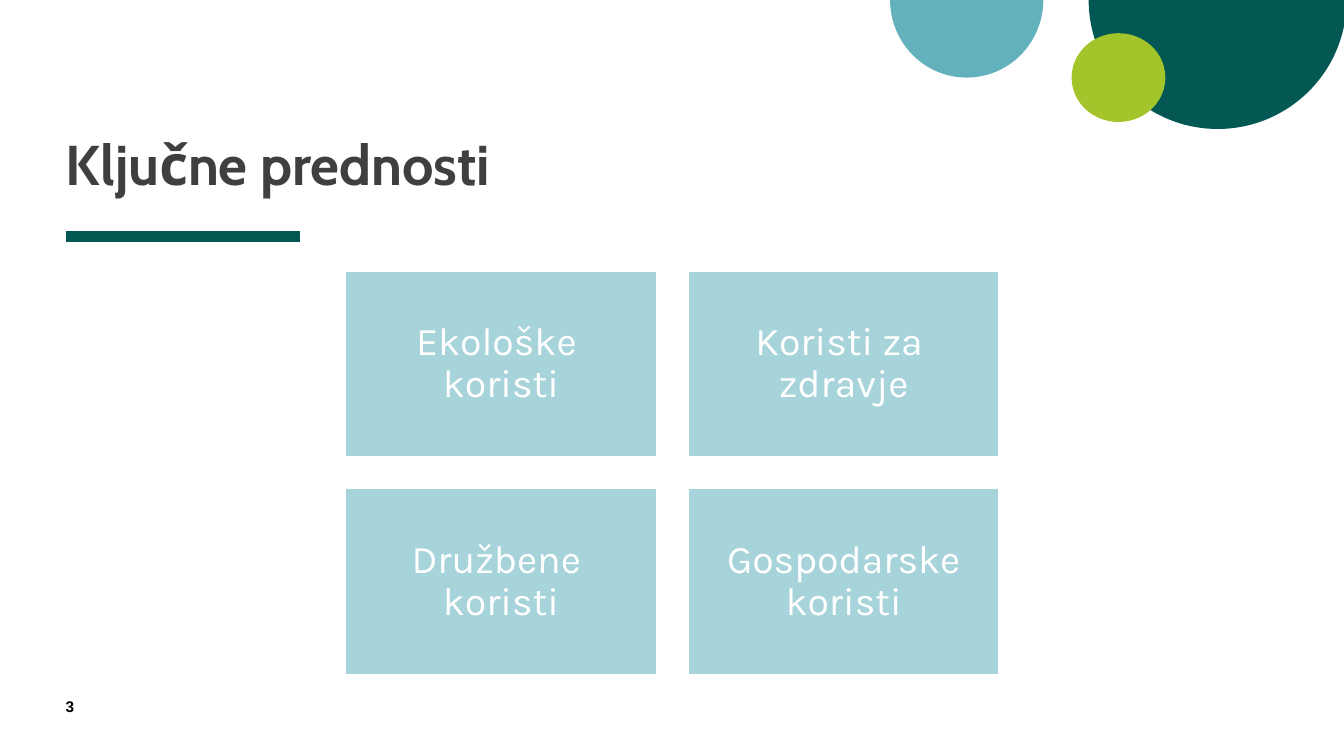
"""Build the key benefits slide with its four cards."""
from itertools import product

from lxml.etree import SubElement
from pptx import Presentation
from pptx.dml.color import RGBColor as RGB
from pptx.enum.shapes import MSO_CONNECTOR as LINE, MSO_SHAPE as SHAPE
from pptx.enum.text import MSO_ANCHOR as ANCHOR, MSO_AUTO_SIZE as AUTO, PP_ALIGN as ALIGN
from pptx.oxml.ns import qn
from pptx.util import Inches, Pt

COLORS = {"green": "035854", "teal": "64B1BE", "lime": "A3C42A", "card": "A7D3DA",
          "title": "3F3F3F", "white": "FFFFFF", "black": "000000"}
BENEFITS = ["Ekološke \nkoristi", "Koristi za \nzdravje",
            "Družbene \nkoristi", "Gospodarske koristi"]


class Deck:
    """Hold the style and current slide; lengths are percentages of the slide."""

    def __init__(self):
        self.prs = Presentation()
        self.prs.slide_width, self.prs.slide_height = Inches(13.33), Inches(7.5)
        self.s = self.prs.slides.add_slide(self.prs.slide_layouts[5])

    def color(self, name):
        return RGB.from_string(COLORS[name])

    def box(self, x, y, w, h):
        sw, sh = self.prs.slide_width, self.prs.slide_height
        return [round(v * size / 100) for v, size in ((x, sw), (y, sh), (w, sw), (h, sh))]

    def set_text(self, sp, text, font, size, color, bold=False, align=ALIGN.LEFT,
                 anchor=ANCHOR.TOP, spacing=1.0, inset=0):
        tf = sp.text_frame
        tf.text = text
        tf.word_wrap, tf.auto_size, tf.vertical_anchor = True, AUTO.NONE, anchor
        tf.margin_left = tf.margin_top = tf.margin_right = tf.margin_bottom = Inches(inset)
        for p in tf.paragraphs:
            p.alignment, p.line_spacing = align, spacing
            for r in p.runs:
                r.font.name, r.font.size, r.font.bold = font, Pt(size), bold
                r.font.color.rgb = self.color(color)

    def title(self, text, *box):
        sp = self.s.shapes.title
        sp.left, sp.top, sp.width, sp.height = self.box(*box)
        self.set_text(sp, text, "Cabin", 40, "title", True, anchor=ANCHOR.BOTTOM, spacing=0.8)

    def shape(self, kind, color, *box):
        sp = self.s.shapes.add_shape(kind, *self.box(*box))
        sp.shadow.inherit = False
        sp.fill.solid()
        sp.fill.fore_color.rgb = self.color(color)
        sp.line.fill.background()
        return sp

    def half_disc(self, color, *box):
        sp = self.shape(SHAPE.PIE, color, *box)
        sp.adjustments[0], sp.adjustments[1] = 0, 108

    def rule(self, x, y, w, color, weight):
        left, top, width, _ = self.box(x, y, w, 0)
        line = self.s.shapes.add_connector(LINE.STRAIGHT, left, top, left + width, top)
        line.line.color.rgb = self.color(color)
        line.line.width = Pt(weight)
        SubElement(line._element.spPr, qn("a:effectLst"))

    def card(self, text, *box):
        sp = self.shape(SHAPE.RECTANGLE, "card", *box)
        sp.line.color.rgb = self.color("white")
        sp.line.width = Pt(2)
        self.set_text(sp, text, "Karla", 28, "white", align=ALIGN.CENTER,
                      anchor=ANCHOR.MIDDLE, spacing=0.9, inset=0.12)

    def page_number(self, text, *box):
        sp = self.s.shapes.add_textbox(*self.box(*box))
        self.set_text(sp, text, "Arial", 11, "black", True)


def main():
    deck = Deck()
    margin = 4.88
    deck.half_disc("green", 81, -17.07, 19.2, 34.13)
    deck.rule(margin, 31.33, 17.48, "green", 8)
    deck.half_disc("teal", 66.23, -10.27, 11.4, 20.53)
    deck.shape(SHAPE.OVAL, "lime", 79.73, 4.4, 6.98, 11.73)
    deck.title("Ključne prednosti", margin, 2.8, 55.65, 23.2)
    for (row, col), text in zip(product(range(2), repeat=2), BENEFITS):
        deck.card(text, 25.65 + 25.5 * col, 35.73 + 28.8 * row, 23.25, 24.8)
    deck.page_number("3", margin, 92.27, 4.28, 3.6)
    deck.prs.save("out.pptx")


if __name__ == "__main__":
    main()
